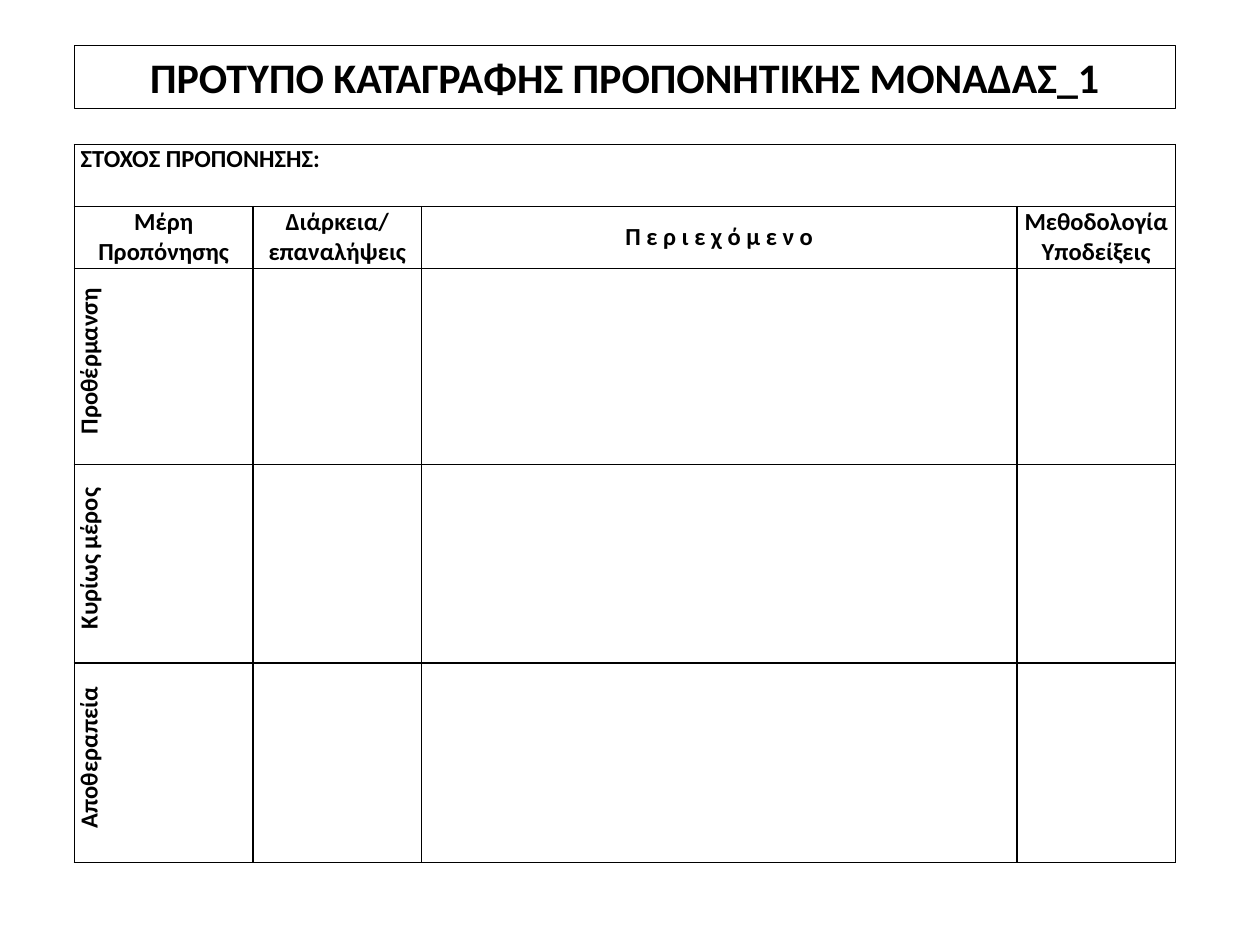
from lxml.etree import SubElement
from pptx import Presentation
from pptx.dml.color import RGBColor
from pptx.enum.shapes import MSO_SHAPE
from pptx.enum.text import MSO_ANCHOR, PP_ALIGN
from pptx.oxml.ns import qn
from pptx.util import Inches, Pt

COLORS = {"ink": "000000", "paper": "FFFFFF"}
FONT = "Calibri"
SLIDE_WIDTH, SLIDE_HEIGHT = Inches(10), Inches(7.5)

# Boxes are left, top, width, height as shares of the slide
TITLE_BOX = (0.059, 0.048, 0.874, 0.067)
PLAN_BOX = (0.059, 0.153, 0.874, 0.76)

# Relative sizes of the plan's grid
COLUMN_WEIGHTS = (1.42, 1.34, 4.73, 1.26)
ROW_WEIGHTS = (0.49, 0.49, 1.55, 1.57, 1.58)

TITLE = "ΠΡΟΤΥΠΟ ΚΑΤΑΓΡΑΦΗΣ ΠΡΟΠΟΝΗΤΙΚΗΣ ΜΟΝΑΔΑΣ_1"
GOAL = "ΣΤΟΧΟΣ ΠΡΟΠΟΝΗΣΗΣ:"
HEADINGS = (
    ("Μέρη", "Προπόνησης"),
    ("Διάρκεια/επαναλήψεις",),
    ("Π ε ρ ι ε χ ό μ ε ν ο",),
    ("Μεθοδολογία", "Υποδείξεις"),
)
PHASES = ("Προθέρμανση", "Κυρίως μέρος", "Αποθεραπεία")


def color(name):
    return RGBColor.from_string(COLORS[name])


def to_lengths(box):
    left, top, width, height = box
    return (int(left * SLIDE_WIDTH), int(top * SLIDE_HEIGHT),
            int(width * SLIDE_WIDTH), int(height * SLIDE_HEIGHT))


def share_out(total, weights):
    return [int(total * weight / sum(weights)) for weight in weights]


def write(frame, lines, size, align):
    for index, line in enumerate(lines):
        para = frame.paragraphs[0] if index == 0 else frame.add_paragraph()
        para.text = line
        para.alignment = align
        para.font.name = FONT
        para.font.size = Pt(size)
        para.font.bold = True
        para.font.color.rgb = color("ink")


def style_cell(cell):
    """Give a cell plain black borders, no fill and narrow margins."""
    properties = cell._tc.get_or_add_tcPr()
    for side in ("a:lnL", "a:lnR", "a:lnT", "a:lnB"):
        line = SubElement(properties, qn(side), w=str(Pt(1)))
        fill = SubElement(line, qn("a:solidFill"))
        SubElement(fill, qn("a:srgbClr"), val=COLORS["ink"])
    cell.fill.background()
    cell.margin_left = cell.margin_right = Inches(0.05)
    cell.margin_top = cell.margin_bottom = 0
    cell.vertical_anchor = MSO_ANCHOR.MIDDLE


def add_title(page, box):
    title = page.shapes.add_shape(MSO_SHAPE.RECTANGLE, *to_lengths(box))
    title.shadow.inherit = False
    title.fill.background()
    title.line.color.rgb = color("ink")
    title.line.width = Pt(0.75)
    title.text_frame.word_wrap = True
    write(title.text_frame, [TITLE], 24, PP_ALIGN.CENTER)


def add_plan(page, box):
    """Add the table of training phases with its goal row and headings."""
    left, top, width, height = to_lengths(box)
    plan = page.shapes.add_table(
        len(ROW_WEIGHTS), len(COLUMN_WEIGHTS), left, top, width, height).table
    plan.first_row = plan.horz_banding = False
    for column, size in zip(plan.columns, share_out(width, COLUMN_WEIGHTS)):
        column.width = size
    for row, size in zip(plan.rows, share_out(height, ROW_WEIGHTS)):
        row.height = size
    for cell in plan.iter_cells():
        style_cell(cell)

    goal = plan.cell(0, 0)
    goal.merge(plan.cell(0, len(COLUMN_WEIGHTS) - 1))
    goal.vertical_anchor = MSO_ANCHOR.TOP
    write(goal.text_frame, [GOAL], 14, PP_ALIGN.LEFT)

    for index, lines in enumerate(HEADINGS):
        write(plan.cell(1, index).text_frame, lines, 14, PP_ALIGN.CENTER)

    for index, phase in enumerate(PHASES, start=2):
        cell = plan.cell(index, 0)
        write(cell.text_frame, [phase], 14, PP_ALIGN.CENTER)
        cell._tc.get_or_add_tcPr().set("vert", "vert270")
        para = cell.text_frame.paragraphs[0]
        para._p.get_or_add_pPr().set("marL", str(Inches(0.08)))


def main():
    deck = Presentation()
    deck.slide_width, deck.slide_height = SLIDE_WIDTH, SLIDE_HEIGHT
    page = deck.slides.add_slide(deck.slide_layouts[6])
    page.background.fill.solid()
    page.background.fill.fore_color.rgb = color("paper")
    add_plan(page, PLAN_BOX)
    add_title(page, TITLE_BOX)
    deck.save("out.pptx")


if __name__ == "__main__":
    main()
